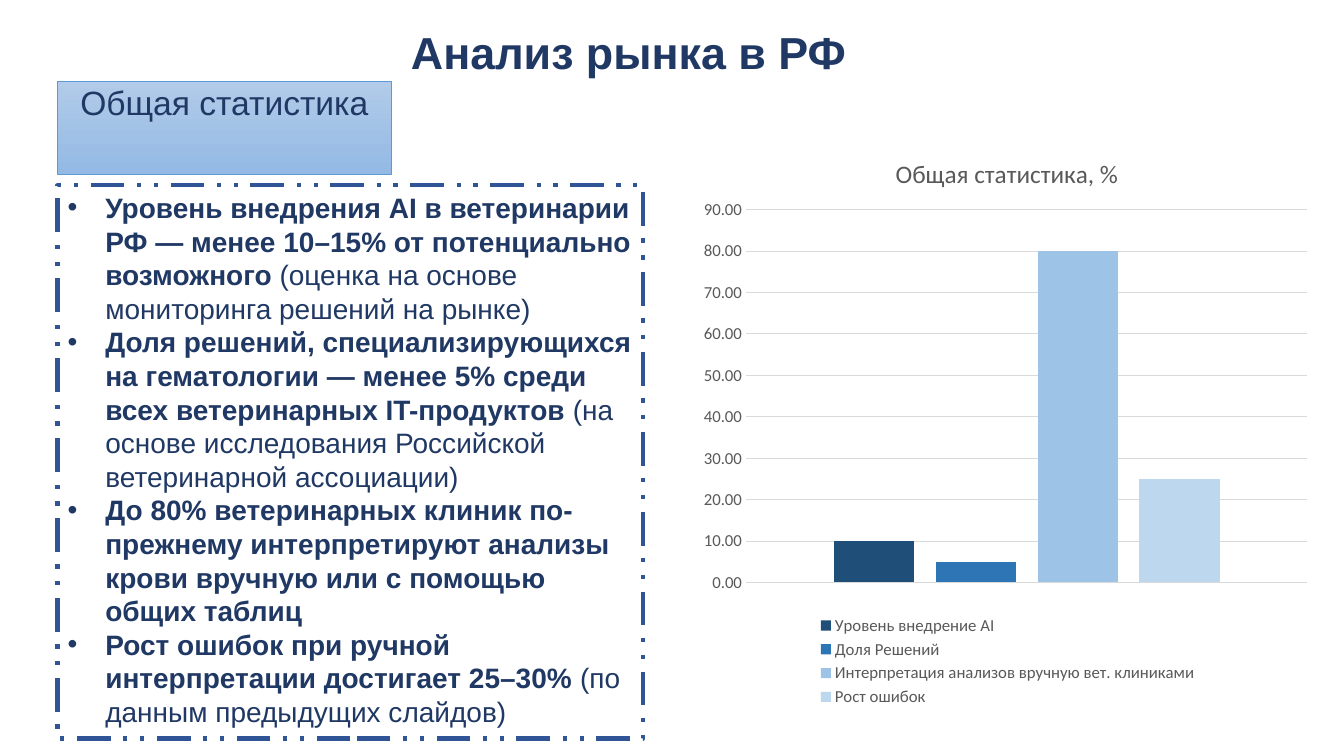
from lxml import etree
from pptx import Presentation
from pptx.chart.data import CategoryChartData
from pptx.dml.color import RGBColor
from pptx.enum.chart import XL_CHART_TYPE, XL_LEGEND_POSITION, XL_TICK_MARK
from pptx.enum.dml import MSO_LINE
from pptx.enum.text import MSO_ANCHOR, MSO_AUTO_SIZE, PP_ALIGN
from pptx.oxml import parse_xml
from pptx.oxml.ns import nsdecls, qn
from pptx.util import Cm, Pt

TITLE = "Анализ рынка в РФ"
LABEL = "Общая статистика"
# Each item: (bold part, plain part)
FACTS = [
    ("Уровень внедрения AI в ветеринарии РФ — менее 10–15% от потенциально возможного",
     " (оценка на основе мониторинга решений на рынке)"),
    ("Доля решений, специализирующихся на гематологии — менее 5% среди всех ветеринарных IT-продуктов ",
     "(на основе исследования Российской ветеринарной ассоциации)"),
    ("До 80% ветеринарных клиник по-прежнему интерпретируют анализы крови вручную "
     "или с помощью общих таблиц", ""),
    ("Рост ошибок при ручной интерпретации достигает 25–30% ",
     "(по данным предыдущих слайдов)"),
]
CHART_TITLE = "Общая статистика, %"
SERIES = [
    ("Уровень внедрение AI", 10, "1F4E79"),
    ("Доля Решений", 5, "2E75B6"),
    ("Интерпретация анализов вручную вет. клиниками", 80, "9DC3E6"),
    ("Рост ошибок", 25, "BDD7EE"),
]
NAVY, GREY, GRID = "203864", "595959", "D9D9D9"

# left, top, width, height in cm
TITLE_BOX = (1.24, -0.46, 29.21, 3.68)
LABEL_BOX = (1.45, 2.06, 8.41, 2.34)
FACTS_BOX = (1.45, 4.67, 14.76, 13.94)
CHART_BOX = (17.37, 3.23, 15.9, 14.68)
BULLET_INDENT = Cm(0.95)


def color(value):
    return RGBColor.from_string(value)


def format_font(font, hex_color, **values):
    for name, value in values.items():
        setattr(font, name, value)
    font.color.rgb = color(hex_color)


def place(shape, box):
    for name, value in zip(("left", "top", "width", "height"), box):
        setattr(shape, name, Cm(value))


def prepare(shape, box, anchor):
    """Move a placeholder and give back its text frame."""
    place(shape, box)
    frame = shape.text_frame
    values = {"word_wrap": True, "auto_size": MSO_AUTO_SIZE.NONE, "vertical_anchor": anchor}
    for name, value in values.items():
        setattr(frame, name, value)
    return frame


def write_heading(frame, text, size, bold):
    paragraph = frame.paragraphs[0]
    paragraph.alignment = PP_ALIGN.CENTER
    paragraph.line_spacing = 0.9
    paragraph.space_before = Pt(0)
    run = paragraph.add_run()
    run.text = text
    format_font(run.font, NAVY, name="Arial", size=Pt(size), bold=bold)


def add_bullet(paragraph):
    properties = paragraph._p.get_or_add_pPr()
    properties.set("marL", str(BULLET_INDENT))
    properties.set("indent", str(-BULLET_INDENT))
    etree.SubElement(properties, qn("a:buFont")).set("typeface", "Arial")
    etree.SubElement(properties, qn("a:buChar")).set("char", "•")


def set_layout(element, position, **fractions):
    """Fix a chart part at fractions of the chart area."""
    for old in element.findall(qn("c:layout")):
        element.remove(old)
    target = '<c:layoutTarget val="inner"/>' if element.tag == qn("c:plotArea") else ""
    modes = '<c:xMode val="edge"/><c:yMode val="edge"/>'
    values = "".join(f'<c:{name} val="{value}"/>' for name, value in fractions.items())
    element.insert(position, parse_xml(
        f'<c:layout {nsdecls("c")}><c:manualLayout>{target}{modes}{values}'
        '</c:manualLayout></c:layout>'))


def add_label(shape):
    write_heading(prepare(shape, LABEL_BOX, MSO_ANCHOR.TOP), LABEL, 24, False)
    shape.fill.gradient()
    shape.fill.gradient_angle = 270
    for stop, value in zip(shape.fill.gradient_stops, ("B1CBE9", "93B9E4")):
        stop.color.rgb = color(value)
    shape.line.color.rgb = color("5B9BD5")
    shape.line.width = Pt(0.5)


def add_facts(shape):
    frame = prepare(shape, FACTS_BOX, MSO_ANCHOR.TOP)
    shape.fill.solid()
    shape.fill.fore_color.rgb = color("FFFFFF")
    shape.line.color.rgb = color("2F5597")
    shape.line.width = Pt(3)
    shape.line.dash_style = MSO_LINE.DASH_DOT_DOT
    for index, fact in enumerate(FACTS):
        paragraph = frame.add_paragraph() if index else frame.paragraphs[0]
        paragraph.space_before = Pt(0)
        add_bullet(paragraph)
        for text, bold in zip(fact, (True, False)):
            if text:
                run = paragraph.add_run()
                run.text = text
                format_font(run.font, NAVY, name="Arial", size=Pt(20), bold=bold)


def add_statistics_chart(slide):
    data = CategoryChartData(number_format="0.00")
    data.categories = ["1"]
    for name, value, _ in SERIES:
        data.add_series(name, [value])
    chart = slide.shapes.add_chart(
        XL_CHART_TYPE.COLUMN_CLUSTERED, *map(Cm, CHART_BOX), data).chart
    format_font(chart.font, GREY, name="Calibri", size=Pt(12))

    chart.has_title = True
    title_paragraph = chart.chart_title.text_frame.paragraphs[0]
    run = title_paragraph.add_run()
    run.text = CHART_TITLE
    format_font(run.font, GREY, name="Calibri", size=Pt(18), bold=False)
    set_layout(chart.chart_title._element, 1, x=0.32, y=0.04)

    plot = chart.plots[0]
    plot.gap_width, plot.overlap, plot.vary_by_categories = 219, -27, False
    for series, (_, _, value) in zip(plot.series, SERIES):
        series.format.fill.solid()
        series.format.fill.fore_color.rgb = color(value)
    set_layout(chart._chartSpace.chart.plotArea, 0, x=0.09, y=0.14, w=0.89, h=0.64)

    chart.category_axis.visible = False
    axis = chart.value_axis
    values = {"minimum_scale": 0, "maximum_scale": 90, "major_unit": 10,
              "major_tick_mark": XL_TICK_MARK.NONE, "minor_tick_mark": XL_TICK_MARK.NONE}
    for name, value in values.items():
        setattr(axis, name, value)
    axis.format.line.fill.background()
    axis.major_gridlines.format.line.color.rgb = color(GRID)
    axis.major_gridlines.format.line.width = Pt(0.75)
    axis.tick_labels.number_format = "0.00"
    axis.tick_labels.number_format_is_linked = False

    chart.has_legend = True
    chart.legend.position = XL_LEGEND_POSITION.BOTTOM
    chart.legend.include_in_layout = False
    format_font(chart.legend.font, GREY, name="Calibri", size=Pt(12))
    set_layout(chart.legend._element, 1, x=0.2, y=0.83, w=0.61, h=0.17)


def main():
    presentation = Presentation()
    presentation.slide_width, presentation.slide_height = Cm(33.87), Cm(19.05)
    slide = presentation.slides.add_slide(
        presentation.slide_layouts.get_by_name("Comparison"))
    title, label, facts, *unused = slide.placeholders
    for shape in unused:
        shape._element.getparent().remove(shape._element)
    write_heading(prepare(title, TITLE_BOX, MSO_ANCHOR.MIDDLE), TITLE, 32, True)
    add_label(label)
    add_facts(facts)
    add_statistics_chart(slide)
    presentation.save("out.pptx")


if __name__ == "__main__":
    main()
